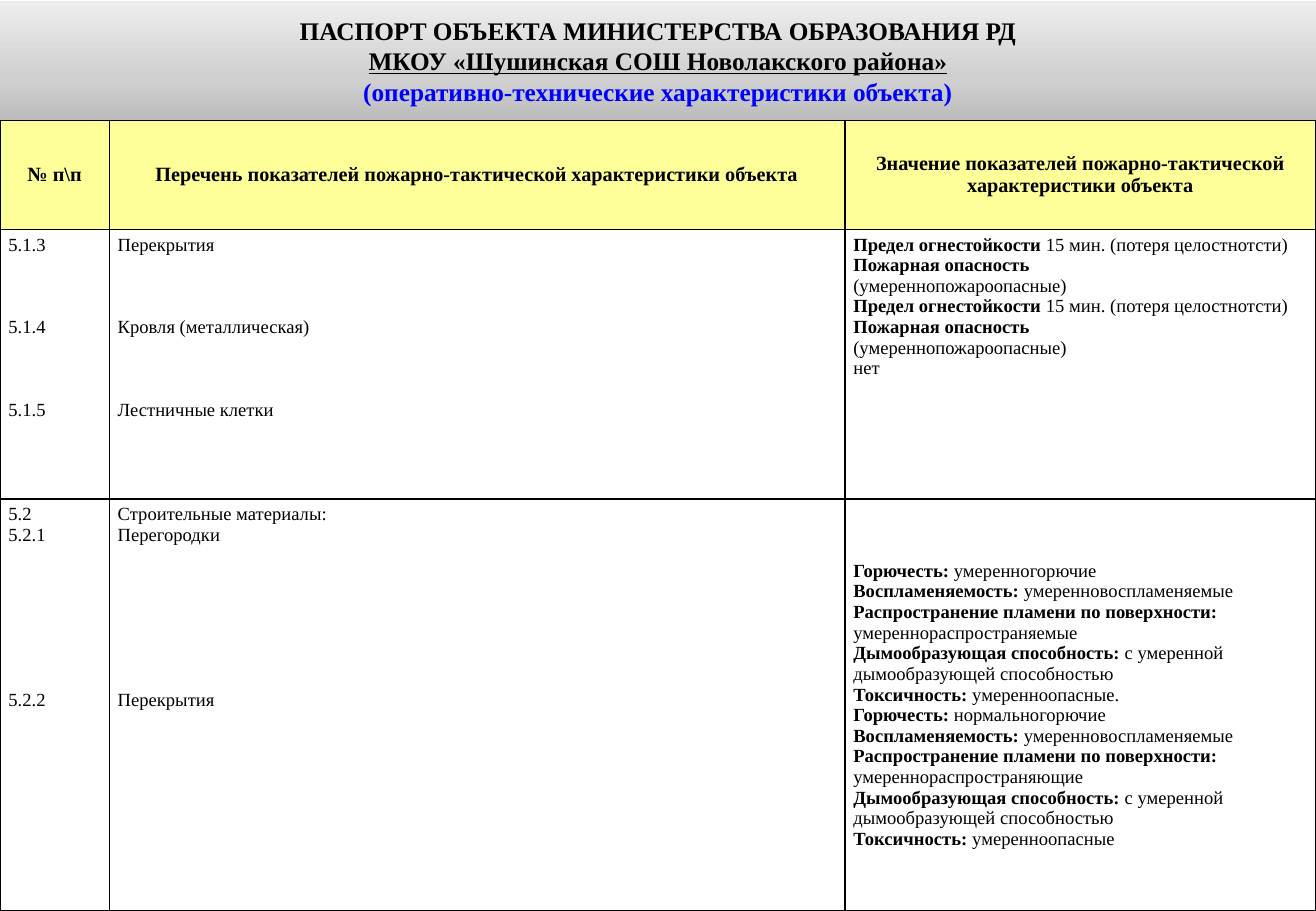
"""Build a slide with the fire-safety passport of a school building."""
from copy import deepcopy
from lxml.etree import SubElement
from pptx import Presentation
from pptx.dml.color import RGBColor as Rgb
from pptx.enum.text import MSO_ANCHOR as Anchor, MSO_AUTO_SIZE as Auto, PP_ALIGN as Align
from pptx.oxml.ns import qn
from pptx.util import Inches, Pt

WIDE, HIGH = Inches(10.83), Inches(7.5)
TOP = 0.132
COLS = (0.083, 0.559, 0.358)
ROWS = (0.12, 0.296, 0.452)
FONT = "Times New Roman"
LINE = 12.23

TITLE = (
    ("ПАСПОРТ ОБЪЕКТА МИНИСТЕРСТВА ОБРАЗОВАНИЯ РД", "000000", False),
    ("МКОУ «Шушинская СОШ Новолакского района»", "000000", True),
    ("(оперативно-технические характеристики объекта)", "0000FF", False),
)
SHADES = ((0, "BCBCBC"), (0.35, "D0D0D0"), (1, "EDEDED"))
HEADS = (
    "№ п\\п",
    "Перечень показателей пожарно-тактической характеристики объекта",
    "Значение показателей пожарно-тактической характеристики объекта",
)
LIMITS = (
    ("Предел огнестойкости ", "15 мин. (потеря целостнотсти)"),
    ("Пожарная опасность", ""),
    ("", "(умереннопожароопасные)"),
)


def traits(burn, spread, toxic):
    """List the fire traits of one building material."""
    return (
        ("Горючесть: ", burn),
        ("Воспламеняемость: ", "умеренновоспламеняемые"),
        ("Распространение пламени по поверхности:", ""),
        ("", spread),
        ("Дымообразующая способность: ", "с умеренной дымообразующей способностью"),
        ("Токсичность: ", toxic),
    )


BODY = (
    (
        ((0, "5.1.3", "Перекрытия"), (3, "5.1.4", "Кровля (металлическая)"),
         (3, "5.1.5", "Лестничные клетки")),
        LIMITS * 2 + (("", "нет"),),
        Anchor.TOP,
    ),
    (
        ((0, "5.2", "Строительные материалы:"), (0, "5.2.1", "Перегородки"),
         (7, "5.2.2", "Перекрытия")),
        traits("умеренногорючие", "умереннораспространяемые", "умеренноопасные.")
        + traits("нормальногорючие", "умереннораспространяющие", "умеренноопасные"),
        Anchor.MIDDLE,
    ),
)


def tint(code):
    """Turn a hex string into a colour."""
    return Rgb.from_string(code)


def style(font, size, bold=None, color="000000"):
    """Set the face, size, weight and colour of a font."""
    font.name, font.size, font.bold = FONT, Pt(size), bold
    font.color.rgb = tint(color)


def paras(frame, count):
    """Return the wanted number of paragraphs of a text frame."""
    for _ in range(count - 1):
        frame.add_paragraph()
    return frame.paragraphs


def shade(shape):
    """Fill a shape with the upright grey gradient."""
    shape.fill.gradient()
    shape.fill.gradient_angle = 90
    stops = shape.element.spPr.find(".//" + qn("a:gsLst"))
    stops.append(deepcopy(stops[0]))
    for stop, (pos, code) in zip(shape.fill.gradient_stops, SHADES):
        stop.position, stop.color.rgb = pos, tint(code)


def banner(slide):
    """Place and format the title."""
    title = slide.shapes.title
    title.left, title.top = 0, Inches(0.01)
    title.width, title.height = WIDE, int(HIGH * TOP) - title.top
    shade(title)
    frame = title.text_frame
    frame.word_wrap, frame.auto_size = True, Auto.NONE
    frame.vertical_anchor = Anchor.MIDDLE
    for para, (text, color, under) in zip(paras(frame, len(TITLE)), TITLE):
        para.text, para.alignment = text, Align.CENTER
        style(para.font, 15, True, color)
        para.font.underline = under


def dress(cell, color, anchor):
    """Give a cell its borders, fill, margins and anchor."""
    props = cell._tc.get_or_add_tcPr()
    for side in ("lnL", "lnR", "lnT", "lnB"):
        edge = SubElement(props, qn("a:" + side), w=str(Pt(1)))
        SubElement(SubElement(edge, qn("a:solidFill")), qn("a:srgbClr"), val="000000")
    cell.fill.solid()
    cell.fill.fore_color.rgb = tint(color)
    cell.margin_left = cell.margin_right = Inches(0.07)
    cell.margin_top = cell.margin_bottom = Inches(0.04)
    cell.vertical_anchor = anchor


def head(cell, text):
    """Write a heading cell."""
    dress(cell, "FFFF99", Anchor.MIDDLE)
    para = cell.text_frame.paragraphs[0]
    para.text, para.alignment = text, Align.CENTER
    style(para.font, 12, True)


def items(cell, pairs):
    """Write lines that each follow a gap of whole lines."""
    dress(cell, "FFFFFF", Anchor.TOP)
    for para, (gap, text) in zip(paras(cell.text_frame, len(pairs)), pairs):
        para.text, para.space_before = text, Pt(gap * LINE)
        style(para.font, 11, False)


def values(cell, pairs, anchor):
    """Write lines of a bold label and a plain value."""
    dress(cell, "FFFFFF", anchor)
    for para, pair in zip(paras(cell.text_frame, len(pairs)), pairs):
        style(para.font, 11)
        for text, bold in zip(pair, (True, False)):
            if text:
                run = para.add_run()
                run.text = text
                style(run.font, 11, bold)


def grid(slide):
    """Add the table of fire-safety figures."""
    top = int(HIGH * TOP)
    table = slide.shapes.add_table(len(ROWS), len(COLS), 0, top, WIDE, HIGH - top).table
    for col, share in zip(table.columns, COLS):
        col.width = int(WIDE * share)
    for row, share in zip(table.rows, ROWS):
        row.height = int(HIGH * share)
    for col, text in enumerate(HEADS):
        head(table.cell(0, col), text)
    for row, (parts, facts, anchor) in enumerate(BODY, 1):
        items(table.cell(row, 0), [(gap, code) for gap, code, _ in parts])
        items(table.cell(row, 1), [(gap, name) for gap, _, name in parts])
        values(table.cell(row, 2), facts, anchor)


def main():
    """Build and save the slide."""
    deck = Presentation()
    deck.slide_width, deck.slide_height = WIDE, HIGH
    slide = deck.slides.add_slide(deck.slide_layouts[5])
    banner(slide)
    grid(slide)
    deck.save("out.pptx")


if __name__ == "__main__":
    main()
